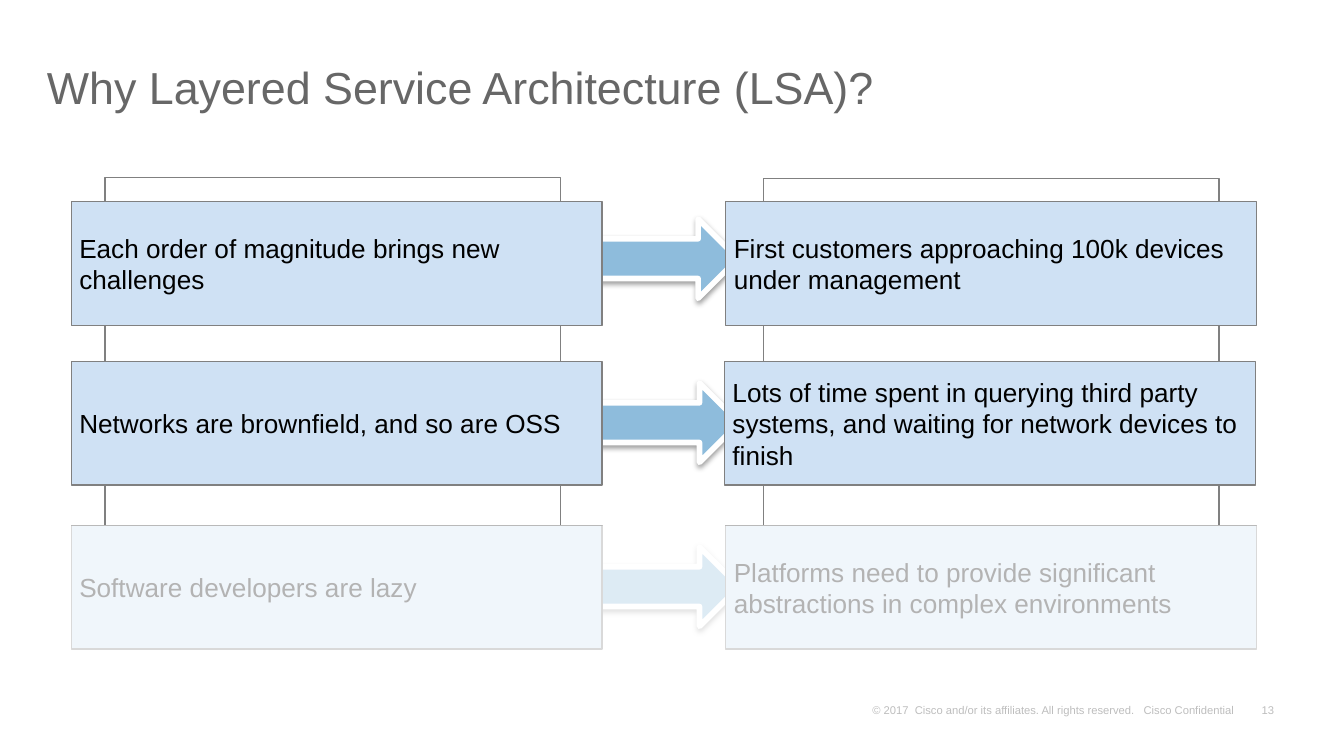
from dataclasses import dataclass

from lxml import etree
from pptx import Presentation
from pptx import util as u
from pptx.dml.color import RGBColor
from pptx.enum import shapes, text
from pptx.oxml.ns import qn


@dataclass
class Box:
    left: float
    top: float
    width: float
    height: float

    def lengths(self) -> list:
        return [u.Inches(n) for n in (self.left, self.top, self.width, self.height)]


@dataclass
class Row:
    top: float
    arrow_left: float
    arrow_top: float
    effect_left: float
    reason: str
    effect: str


ROWS = [
    Row(1.5, 4.38, 1.63, 5.4, "Each order of magnitude brings new challenges",
        "First customers approaching 100k devices under management"),
    Row(2.69, 4.39, 2.85, 5.39, "Networks are brownfield, and so are OSS",
        "Lots of time spent in querying third party systems, and waiting for network devices to finish"),
    Row(3.91, 4.39, 4.07, 5.4, "Software developers are lazy",
        "Platforms need to provide significant abstractions in complex environments"),
]
FRAMES = [Box(5.68, 1.33, 3.39, 3.3), Box(0.78, 1.32, 3.39, 3.3)]
REASON_LEFT = 0.53
CARD_WIDTH, CARD_HEIGHT = 3.95, 0.92


def color(value: str) -> RGBColor:
    return RGBColor.from_string(value)


def set_opacity(element, percent: int) -> None:
    for fill_color in element.iter(qn("a:srgbClr")):
        etree.SubElement(fill_color, qn("a:alpha"), val=str(percent * 1000))


def add_shadow(shape) -> None:
    effects = shape.element.spPr.find(qn("a:effectLst"))
    shadow = etree.SubElement(effects, qn("a:outerShdw"), blurRad=str(u.Pt(3.1)),
                              dist=str(u.Pt(1.6)), dir="5400000", rotWithShape="0")
    etree.SubElement(shadow, qn("a:srgbClr"), val="000000")
    set_opacity(shadow, 38)


def add_shape(slide, kind, box: Box, fill: str, line: str = "", weight: float = 0.75):
    shape = slide.shapes.add_shape(kind, *box.lengths())
    shape.shadow.inherit = False
    shape.fill.solid()
    shape.fill.fore_color.rgb = color(fill)
    if line:
        shape.line.color.rgb = color(line)
        shape.line.width = u.Pt(weight)
    else:
        shape.line.fill.background()
    return shape


def write(shape, words: str, size: float, ink: str, anchor, inset: tuple,
          align=text.PP_ALIGN.LEFT, wrap: bool = True):
    frame = shape.text_frame
    frame.text = words
    frame.word_wrap = wrap
    frame.vertical_anchor = anchor
    frame.margin_left = frame.margin_right = u.Inches(inset[0])
    frame.margin_top = frame.margin_bottom = u.Inches(inset[1])
    paragraph = frame.paragraphs[0]
    paragraph.alignment = align
    for run in paragraph.runs:
        run.font.name = "Arial"
        run.font.size = u.Pt(size)
        run.font.color.rgb = color(ink)
    return paragraph


def add_card(slide, left: float, top: float, words: str) -> None:
    card = add_shape(slide, shapes.MSO_SHAPE.RECTANGLE,
                     Box(left, top, CARD_WIDTH, CARD_HEIGHT), "CFE1F4", "808080")
    paragraph = write(card, words, 14, "000000", text.MSO_ANCHOR.MIDDLE, (0.06, 0.03))
    paragraph.space_after = u.Pt(3.1)


def add_footer(slide, box: Box, words: str, align, wrap: bool) -> None:
    footer = slide.shapes.add_textbox(*box.lengths())
    write(footer, words, 6, "000000", text.MSO_ANCHOR.BOTTOM, (0.07, 0.03), align, wrap)
    set_opacity(footer.element, 25)


def main() -> None:
    presentation = Presentation()
    presentation.slide_width = u.Inches(10)
    presentation.slide_height = u.Inches(10) * 9 // 16
    slide = presentation.slides.add_slide(presentation.slide_layouts[6])

    add_footer(slide, Box(9.31, 5.19, 0.24, 0.17), "13", text.PP_ALIGN.RIGHT, False)
    add_footer(slide, Box(6.42, 5.19, 2.91, 0.17),
               "© 2017  Cisco and/or its affiliates. All rights reserved.   Cisco Confidential",
               text.PP_ALIGN.LEFT, True)

    for frame in FRAMES:
        add_shape(slide, shapes.MSO_SHAPE.RECTANGLE, frame, "FFFFFF", "808080")

    title = slide.shapes.add_textbox(*Box(0.25, 0.2, 9.38, 0.69).lengths())
    paragraph = write(title, "Why Layered Service Architecture (LSA)?", 24, "676767",
                      text.MSO_ANCHOR.BOTTOM, (0.1, 0.05))
    paragraph.line_spacing = 0.8

    for row in ROWS:
        arrow = add_shape(slide, shapes.MSO_SHAPE.RIGHT_ARROW,
                          Box(row.arrow_left, row.arrow_top, 1.11, 0.59), "8EBCDC", "FFFFFF", 3)
        add_shadow(arrow)
        add_card(slide, row.effect_left, row.top, row.effect)
    for row in ROWS:
        add_card(slide, REASON_LEFT, row.top, row.reason)

    veil = add_shape(slide, shapes.MSO_SHAPE.RECTANGLE, Box(0.36, 3.91, 9.27, 1.03), "FFFFFF")
    set_opacity(veil.element.spPr, 70)

    presentation.save("out.pptx")


if __name__ == "__main__":
    main()
